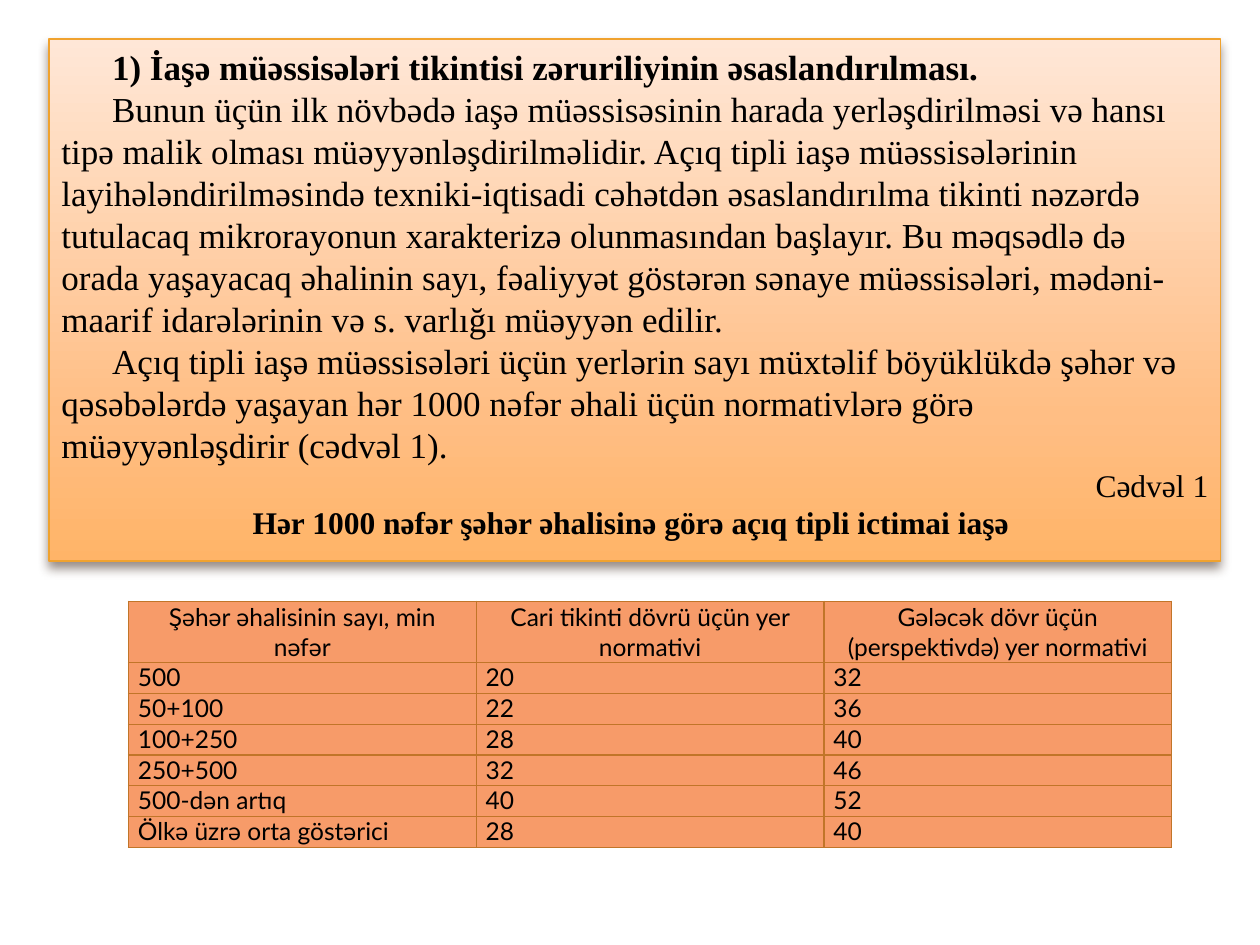
from copy import deepcopy
from dataclasses import dataclass

from lxml.etree import SubElement
from pptx import Presentation
from pptx.dml.color import RGBColor as RGB
from pptx.enum.shapes import MSO_SHAPE as SHAPE
from pptx.enum.text import MSO_ANCHOR as ANCHOR, PP_ALIGN as ALIGN
from pptx.oxml.ns import qn
from pptx.util import Cm, Pt


@dataclass(frozen=True)
class Theme:
    text: str = "000000"
    gradient: tuple = ((0, "FFE7D7"), (0.72, "FFBE84"), (1, "FFB468"))
    outline: str = "F0A22E"
    shadow: str = "4E3B30"
    cell: str = "F79B69"
    border: str = "C17529"
    line_width: float = 0.79
    serif: str = "Times New Roman"
    sans: str = "Lato"
    body: int = 20
    caption: int = 18
    table: int = 14


THEME = Theme()

PARAGRAPHS = [
    ("1) İaşə müəssisələri tikintisi zəruriliyinin əsaslandırılması.",
     dict(bold=True, indent=Cm(1.02))),
    ("Bunun üçün ilk növbədə iaşə müəssisəsinin harada yerləşdirilməsi və hansı "
     "tipə malik olması müəyyənləşdirilməlidir. Açıq tipli iaşə müəssisələrinin "
     "layihələndirilməsində texniki-iqtisadi cəhətdən əsaslandırılma tikinti nəzərdə "
     "tutulacaq mikrorayonun xarakterizə olunmasından başlayır. Bu məqsədlə də "
     "orada yaşayacaq əhalinin sayı, fəaliyyət göstərən sənaye müəssisələri, "
     "mədəni-maarif idarələrinin və s. varlığı müəyyən edilir.",
     dict(indent=Cm(1.02))),
    ("Açıq tipli iaşə müəssisələri üçün yerlərin sayı müxtəlif böyüklükdə şəhər və "
     "qəsəbələrdə yaşayan hər 1000 nəfər əhali üçün normativlərə görə "
     "müəyyənləşdirir (cədvəl 1).",
     dict(indent=Cm(1.02))),
    ("Cədvəl 1", dict(size=THEME.caption, align=ALIGN.RIGHT)),
    ("Hər 1000 nəfər şəhər əhalisinə görə açıq tipli ictimai iaşə ",
     dict(size=THEME.caption, align=ALIGN.CENTER, bold=True)),
]

ROWS = [
    ("Şəhər əhalisinin sayı, min nəfər", "Cari tikinti dövrü üçün yer normativi",
     "Gələcək dövr üçün (perspektivdə) yer normativi"),
    ("500", "20", "32"),
    ("50+100", "22", "36"),
    ("100+250", "28", "40"),
    ("250+500", "32", "46"),
    ("500-dən artıq", "40", "52"),
    ("Ölkə üzrə orta göstərici", "28", "40"),
]


def write(p, text, size=THEME.body, font=THEME.serif, bold=False,
          align=ALIGN.LEFT, indent=0):
    p.alignment = align
    if indent:
        pPr = p._p.get_or_add_pPr()
        pPr.set("marL", "0")
        pPr.set("indent", str(int(indent)))
    r = p.add_run()
    r.text = text
    r.font.size = Pt(size)
    r.font.name = font
    r.font.bold = bold
    r.font.color.rgb = RGB.from_string(THEME.text)


def fill_gradient(fill, stops):
    fill.gradient()
    fill.gradient_angle = 270
    first = fill.gradient_stops[0]._gs
    first.addnext(deepcopy(first))
    for stop, (position, color) in zip(fill.gradient_stops, stops):
        stop.position = position
        stop.color.rgb = RGB.from_string(color)


def add_shadow(sp, color, alpha, blur, distance):
    sp.shadow.inherit = False
    effects = sp._element.spPr.find(qn("a:effectLst"))
    shadow = SubElement(effects, qn("a:outerShdw"), blurRad=str(Pt(blur)),
                        dist=str(Pt(distance)), dir="5400000", rotWithShape="0")
    srgb = SubElement(shadow, qn("a:srgbClr"), val=color)
    SubElement(srgb, qn("a:alpha"), val=str(alpha * 1000))


def add_text_panel(slide, left, top, width, height):
    sp = slide.shapes.add_shape(SHAPE.RECTANGLE, left, top, width, height)
    fill_gradient(sp.fill, THEME.gradient)
    sp.line.color.rgb = RGB.from_string(THEME.outline)
    sp.line.width = Pt(THEME.line_width)
    add_shadow(sp, THEME.shadow, alpha=60, blur=6, distance=4)
    tf = sp.text_frame
    tf.word_wrap = True
    tf.vertical_anchor = ANCHOR.TOP
    for i, (text, style) in enumerate(PARAGRAPHS):
        p = tf.add_paragraph() if i else tf.paragraphs[0]
        write(p, text, **style)


def format_cell(cell, text, header):
    cell.margin_left = cell.margin_right = Cm(0.19)
    cell.margin_top = cell.margin_bottom = 0
    cell.vertical_anchor = ANCHOR.MIDDLE if header else ANCHOR.TOP
    write(cell.text_frame.paragraphs[0], text, size=THEME.table, font=THEME.sans,
          align=ALIGN.CENTER if header else ALIGN.JUSTIFY)
    tcPr = cell._tc.get_or_add_tcPr()
    for side in ("lnL", "lnR", "lnT", "lnB"):
        ln = SubElement(tcPr, qn(f"a:{side}"), w=str(Pt(THEME.line_width)))
        SubElement(SubElement(ln, qn("a:solidFill")), qn("a:srgbClr"), val=THEME.border)
    cell.fill.solid()
    cell.fill.fore_color.rgb = RGB.from_string(THEME.cell)


def add_norms_table(slide, left, top, column_width, header_height, row_height):
    n_rows, n_cols = len(ROWS), len(ROWS[0])
    height = header_height + row_height * (n_rows - 1)
    table = slide.shapes.add_table(n_rows, n_cols, left, top,
                                   column_width * n_cols, height).table
    for column in table.columns:
        column.width = column_width
    for i, texts in enumerate(ROWS):
        table.rows[i].height = row_height if i else header_height
        for j, text in enumerate(texts):
            format_cell(table.cell(i, j), text, header=i == 0)


def main():
    prs = Presentation()
    prs.slide_width, prs.slide_height = Cm(25.4), Cm(19.05)
    slide = prs.slides.add_slide(prs.slide_layouts[6])
    add_text_panel(slide, Cm(0.99), Cm(0.79), Cm(23.62), Cm(10.52))
    add_norms_table(slide, Cm(2.59), Cm(12.12), column_width=Cm(7.01),
                    header_height=Cm(1.24), row_height=Cm(0.62))
    prs.save("out.pptx")


if __name__ == "__main__":
    main()
